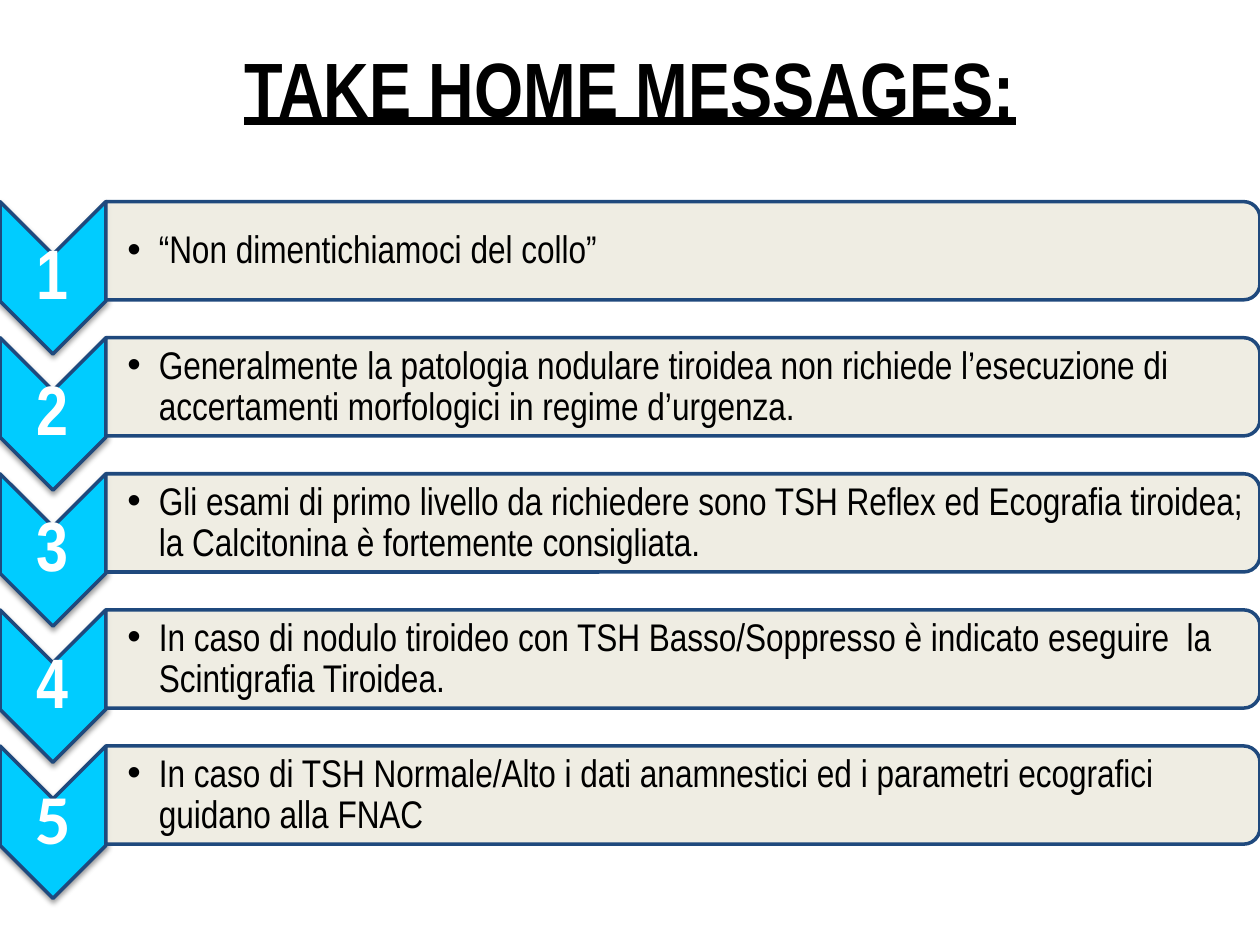
import pptx
import pptx.util
import pptx.dml.color
import pptx.enum.shapes
import pptx.enum.text
import pptx.oxml
import pptx.oxml.ns

SHAPES = pptx.enum.shapes.MSO_SHAPE
ALIGN = pptx.enum.text.PP_ALIGN
MIDDLE = pptx.enum.text.MSO_ANCHOR.MIDDLE
INCH = pptx.util.Inches
PT = pptx.util.Pt

# Grid: one row per message, a number column and a message column
SLIDE_W, SLIDE_H = 10, 7.5
FIRST_ROW, ROW_PITCH, ROW_H = 1.6, 1.08, 0.78
NUMBER_W, CHEVRON_H = 0.84, 1.21
MESSAGE_W = SLIDE_W - NUMBER_W
NARROW = "Arial Narrow"

# Message and the font of its number
MESSAGES = [
    ("“Non dimentichiamoci del collo”", NARROW),
    ("Generalmente la patologia nodulare tiroidea non richiede l’esecuzione di "
     "accertamenti morfologici in regime d’urgenza.", NARROW),
    ("Gli esami di primo livello da richiedere sono TSH Reflex ed Ecografia tiroidea; "
     "la Calcitonina è fortemente consigliata.", NARROW),
    ("In caso di nodulo tiroideo con TSH Basso/Soppresso è indicato eseguire  la "
     "Scintigrafia Tiroidea.", NARROW),
    ("In caso di TSH Normale/Alto i dati anamnestici ed i parametri ecografici "
     "guidano alla FNAC", "Calibri"),
]


def color(value):
    return pptx.dml.color.RGBColor.from_string(value)


def xml(markup):
    """Parse an element written with the a: prefix."""
    head, mark, rest = markup.partition(">")
    if head.endswith("/"):
        head, mark = head[:-1], "/>"
    return pptx.oxml.parse_xml(f"{head} {pptx.oxml.ns.nsdecls('a')}{mark}{rest}")


def format_text(frame, text, size, font, ink, bold=False, align=ALIGN.LEFT):
    frame.text = text
    frame.word_wrap = True
    frame.vertical_anchor = MIDDLE
    paragraph = frame.paragraphs[0]
    paragraph.alignment = align
    letters = paragraph.runs[0].font
    letters.size, letters.name, letters.bold = PT(size), font, bold
    letters.color.rgb = color(ink)
    return paragraph


def add_label(slide, box, insets, *style, **options):
    frame = slide.shapes.add_textbox(*map(INCH, box)).text_frame
    (frame.margin_left, frame.margin_top,
     frame.margin_right, frame.margin_bottom) = map(INCH, insets)
    paragraph = format_text(frame, *style, **options)
    paragraph.line_spacing = 0.9
    return paragraph


def add_turned_shape(slide, kind, left, top, width, height, fill):
    """Add a shape turned by 90 degrees that covers the given box."""
    shift = (width - height) / 2
    shape = slide.shapes.add_shape(
        kind, INCH(left + shift), INCH(top - shift), INCH(height), INCH(width))
    shape.rotation = 90
    shape.shadow.inherit = False
    shape.fill.solid()
    shape.fill.fore_color.rgb = color(fill)
    shape.line.color.rgb = color("1F497D")
    shape.line.width = PT(2)
    return shape


def add_panel(slide, top):
    panel = add_turned_shape(slide, SHAPES.ROUND_2_SAME_RECTANGLE,
                             NUMBER_W, top, MESSAGE_W, ROW_H, "EEECE1")
    fill = panel.element.spPr.find(pptx.oxml.ns.qn("a:solidFill"))
    fill[0].append(xml('<a:alpha val="90000"/>'))


def add_chevron(slide, top):
    chevron = add_turned_shape(slide, SHAPES.CHEVRON, 0, top, NUMBER_W, CHEVRON_H, "00CCFF")
    effects = chevron.element.spPr.find(pptx.oxml.ns.qn("a:effectLst"))
    effects.append(xml(
        f'<a:outerShdw blurRad="{PT(3.1)}" dist="{PT(1.6)}" dir="5400000" rotWithShape="0">'
        '<a:srgbClr val="000000"><a:alpha val="38000"/></a:srgbClr></a:outerShdw>'))


def add_message(slide, top, text):
    paragraph = add_label(slide, (NUMBER_W, top + 0.04, MESSAGE_W - 0.04, 0.71),
                          (0.17, 0.02, 0.02, 0.02), text, 22, NARROW, "000000")
    properties = paragraph._p.get_or_add_pPr()
    properties.set("marL", str(INCH(0.25)))
    properties.set("indent", str(-INCH(0.25)))
    properties.append(xml('<a:buFont typeface="Arial"/>'))
    properties.append(xml('<a:buChar char="•"/>'))


def add_row(slide, index, text, number_font):
    top = FIRST_ROW + index * ROW_PITCH
    add_chevron(slide, top)
    add_label(slide, (0, top + NUMBER_W / 2, NUMBER_W, 0.36), [0.03] * 4,
              str(index + 1), 40, number_font, "FFFFFF", bold=True, align=ALIGN.CENTER)
    add_panel(slide, top)
    add_message(slide, top, text)


def add_title(slide, text):
    title = slide.shapes.title
    title.left, title.top = INCH(0.05 * SLIDE_W), 0
    title.width, title.height = INCH(0.9 * SLIDE_W), INCH(1.37)
    paragraph = format_text(title.text_frame, text, 44, NARROW, "000000",
                            bold=True, align=ALIGN.CENTER)
    paragraph.runs[0].font.underline = True


def main():
    deck = pptx.Presentation()
    deck.slide_width, deck.slide_height = INCH(SLIDE_W), INCH(SLIDE_H)
    slide = deck.slides.add_slide(deck.slide_layouts[5])
    add_title(slide, "TAKE HOME MESSAGES:")
    for index, (text, number_font) in enumerate(MESSAGES):
        add_row(slide, index, text, number_font)
    deck.save("out.pptx")


if __name__ == "__main__":
    main()
